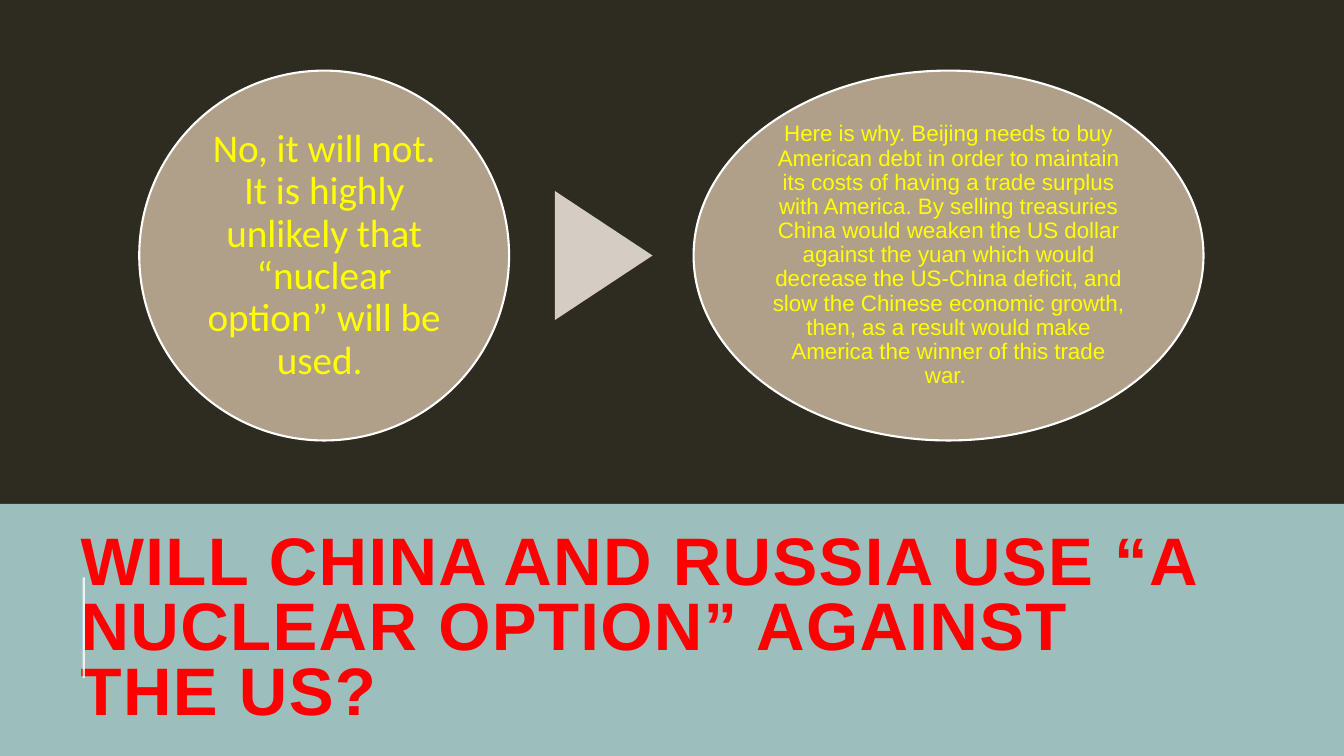
"""Build the slide on whether the "nuclear option" will be used."""
from lxml.etree import SubElement as Sub
from pptx import Presentation
from pptx.dml.color import RGBColor as Rgb
from pptx.enum.shapes import MSO_CONNECTOR as Link, MSO_SHAPE as Kind
from pptx.enum.text import MSO_ANCHOR as Anchor, MSO_AUTO_SIZE as Fit, PP_ALIGN as Align
from pptx.oxml.ns import qn
from pptx.util import Cm, Pt

HUES = {"back": "2E2B21", "band": "9CBEBD", "oval": "B1A089", "arrow": "D5CDC4",
        "edge": "FFFFFF", "head": "FF0000", "text": "FFFF00"}


def paint(kind, box, hue):
    item = slide.shapes.add_shape(kind, *map(Cm, box))
    item.shadow.inherit = False
    item.fill.solid()
    item.fill.fore_color.rgb = Rgb.from_string(HUES[hue])
    item.line.fill.background()
    return item


def write(item, text, hue, frame, para, font):
    body = item.text_frame
    body.text = text
    first = body.paragraphs[0]
    run = first.runs[0]
    for part, style in ((body, frame), (first, para), (run.font, font)):
        for key, value in style.items():
            setattr(part, key, value)
    run.font.color.rgb = Rgb.from_string(HUES[hue])
    return run


deck = Presentation()
deck.slide_width, deck.slide_height = Cm(33.87), Cm(19.05)
slide = deck.slides.add_slide(deck.slide_layouts[5])
slide.background.fill.solid()
slide.background.fill.fore_color.rgb = Rgb.from_string(HUES["back"])

paint(Kind.RECTANGLE, (0, 12.7, 33.87, 6.35), "band")

title = slide.shapes.title
place = {"left": Cm(1.78), "top": Cm(13.82), "width": Cm(29.13), "height": Cm(4.17)}
for key, value in place.items():
    setattr(title, key, value)
run = write(title, "WILL CHINA AND RUSSIA USE “A NUCLEAR OPTION” AGAINST THE US?", "head",
            {"word_wrap": True, "auto_size": Fit.NONE, "vertical_anchor": Anchor.MIDDLE},
            {"alignment": Align.LEFT, "line_spacing": 0.8},
            {"name": "Arial", "size": Pt(48), "bold": True})
run.font._element.set("spc", "100")
title.element.getparent().append(title.element)

rule = slide.shapes.add_connector(Link.STRAIGHT, Cm(2.11), Cm(17.09), Cm(2.11), Cm(14.55))
rule.line.width = Pt(1.5)
rule.line.color.rgb = Rgb.from_string(HUES["edge"])
tint = next(rule.element.iter(qn("a:srgbClr")))
Sub(tint, qn("a:alpha"), val="80000")
Sub(rule.element.spPr, qn("a:effectLst"))

ovals = (
    (3.51, 9.32, 0.1, "Calibri", 28,
     "No, it will not. It is highly unlikely that “nuclear option” will be used. "),
    (17.48, 12.85, 0.06, "Arial", 16,
     "Here is why. Beijing needs to buy American debt in order to maintain its costs of "
     "having a trade surplus with America. By selling treasuries China would weaken the "
     "US dollar against the yuan which would decrease the US-China deficit, and slow the "
     "Chinese economic growth, then, as a result would make America the winner of this "
     "trade war. "),
)
for left, width, inset, face, size, text in ovals:
    oval = paint(Kind.OVAL, (left, 1.78, width, 9.32), "oval")
    oval.line.color.rgb = Rgb.from_string(HUES["edge"])
    oval.line.width = Pt(1.5)
    frame = {f"margin_{side}": Cm(inset) for side in ("left", "top", "right", "bottom")}
    frame |= {"word_wrap": True, "vertical_anchor": Anchor.MIDDLE}
    write(oval, text, "text", frame, {"alignment": Align.CENTER, "line_spacing": 0.9},
          {"name": face, "size": Pt(size)})

arrow = paint(Kind.ISOSCELES_TRIANGLE, (13.59, 5.21, 3.25, 2.46), "arrow")
arrow.rotation = 90

deck.save("out.pptx")
